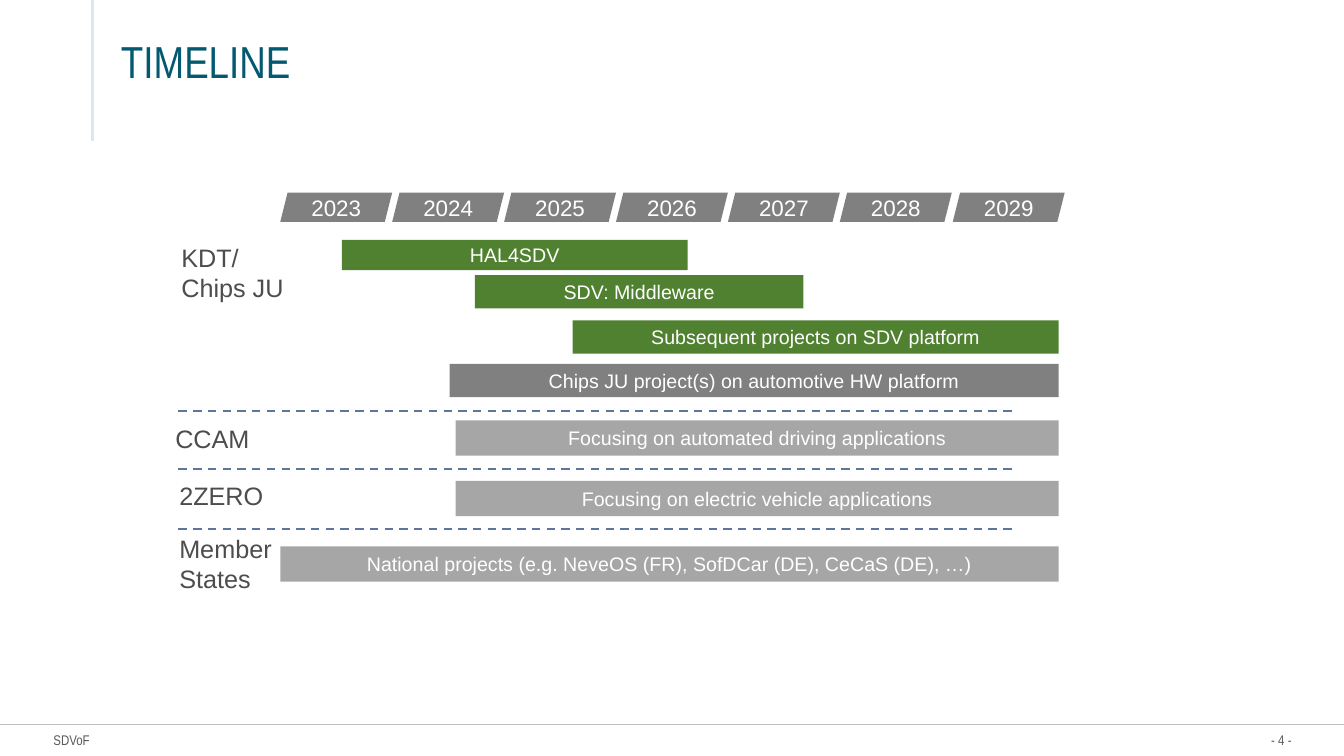
from lxml import etree
from pptx import Presentation
from pptx import util as u
from pptx.dml.color import RGBColor
from pptx.enum import dml, shapes, text
from pptx.oxml.ns import qn

PX = 9144
TEAL = RGBColor(0x03, 0x59, 0x70)
GREEN = RGBColor(0x50, 0x81, 0x30)
GRAY = RGBColor(0x80, 0x80, 0x80)
SILVER = RGBColor(0xA6, 0xA6, 0xA6)
WHITE = RGBColor(0xFF, 0xFF, 0xFF)
INK = RGBColor(0x4D, 0x4D, 0x4D)
FOOT = RGBColor(0x59, 0x59, 0x59)
EDGE = RGBColor(0xBF, 0xBF, 0xBF)
PALE = RGBColor(0xDE, 0xE5, 0xEC)
BLUE = RGBColor(0x5F, 0x76, 0x9C)
LEFT, MID, RIGHT = text.PP_ALIGN.LEFT, text.PP_ALIGN.CENTER, text.PP_ALIGN.RIGHT

deck = Presentation()
deck.slide_width = 1333 * PX
deck.slide_height = 750 * PX
slide = deck.slides.add_slide(deck.slide_layouts[5])


def write(frame, lines, size, color, align, font="Arial"):
    par = frame.paragraphs[0]
    par.alignment = align
    for i, line in enumerate(lines.split("\n")):
        if i:
            par.add_line_break()
        run = par.add_run()
        run.text = line
        run.font.size = u.Pt(size)
        run.font.name = font
        run.font.color.rgb = color


def rule(x1, y1, x2, y2, color, width):
    line = slide.shapes.add_connector(
        shapes.MSO_CONNECTOR.STRAIGHT, x1 * PX, y1 * PX, x2 * PX, y2 * PX)
    line.line.color.rgb = color
    line.line.width = u.Pt(width)
    etree.SubElement(line._element.spPr, qn("a:effectLst"))
    return line


rule(0, 719, 1333, 719, EDGE, 1)
rule(92, 0, 92, 140, PALE, 2.25)

title = slide.shapes.title
title.left, title.top, title.width, title.height = [n * PX for n in (110, 4, 1150, 83)]
frame = title.text_frame
frame.auto_size = text.MSO_AUTO_SIZE.NONE
frame.vertical_anchor = text.MSO_ANCHOR.BOTTOM
frame.margin_bottom = 0
write(frame, "TIMELINE", 32, TEAL, LEFT, "Arial Narrow")

for words, x, wide, align in [("- 4 -", 1240, 41, RIGHT), ("SDVoF", 53, 38, LEFT)]:
    foot = slide.shapes.add_textbox(x * PX, 726 * PX, wide * PX, 17 * PX)
    frame = foot.text_frame
    frame.margin_left = frame.margin_right = frame.margin_top = frame.margin_bottom = 0
    frame.vertical_anchor = text.MSO_ANCHOR.MIDDLE
    frame.word_wrap = False
    write(frame, words, 10, FOOT, align, "Arial Narrow")

for words, x, y, wide, high in [
    ("KDT/\nChips JU", 170, 235, 145, 71),
    ("CCAM", 164, 415, 126, 40),
    ("2ZERO", 168, 472, 130, 40),
    ("Member States", 168, 524, 125, 71),
]:
    label = slide.shapes.add_textbox(x * PX, y * PX, wide * PX, high * PX)
    label.text_frame.word_wrap = True
    write(label.text_frame, words, 18, INK, LEFT)

RECT = shapes.MSO_SHAPE.RECTANGLE
SLANT = shapes.MSO_SHAPE.PARALLELOGRAM
years = [(SLANT, str(2023 + i), 278 + i * 667 // 6, 191, 111, 29, GRAY, 16)
         for i in range(7)]
END = 1050
bars = [(RECT, words, x, y, end - x, high, color, 14)
        for words, x, end, y, high, color in [
    ("HAL4SDV", 339, 682, 238, 30, GREEN),
    ("SDV: Middleware", 471, 797, 273, 33, GREEN),
    ("Subsequent projects on SDV platform", 568, END, 318, 33, GREEN),
    ("Chips JU project(s) on automotive HW platform", 446, END, 361, 33, GRAY),
    ("Focusing on automated driving applications", 452, END, 417, 35, SILVER),
    ("Focusing on electric vehicle applications", 452, END, 477, 35, SILVER),
    ("National projects (e.g. NeveOS (FR), SofDCar (DE), CeCaS (DE), …)",
     278, END, 542, 35, SILVER),
]]
for kind, words, x, y, wide, high, color, size in years + bars:
    bar = slide.shapes.add_shape(kind, x * PX, y * PX, wide * PX, high * PX)
    bar.shadow.inherit = False
    bar.fill.solid()
    bar.fill.fore_color.rgb = color
    bar.line.fill.background()
    frame = bar.text_frame
    frame.margin_left = frame.margin_right = frame.margin_top = frame.margin_bottom = 0
    frame.vertical_anchor = text.MSO_ANCHOR.MIDDLE
    write(frame, words, size, WHITE, MID)

for y in (408, 465, 525):
    rule(177, y, 1004, y, BLUE, 1.5).line.dash_style = dml.MSO_LINE.DASH

deck.save("out.pptx")
